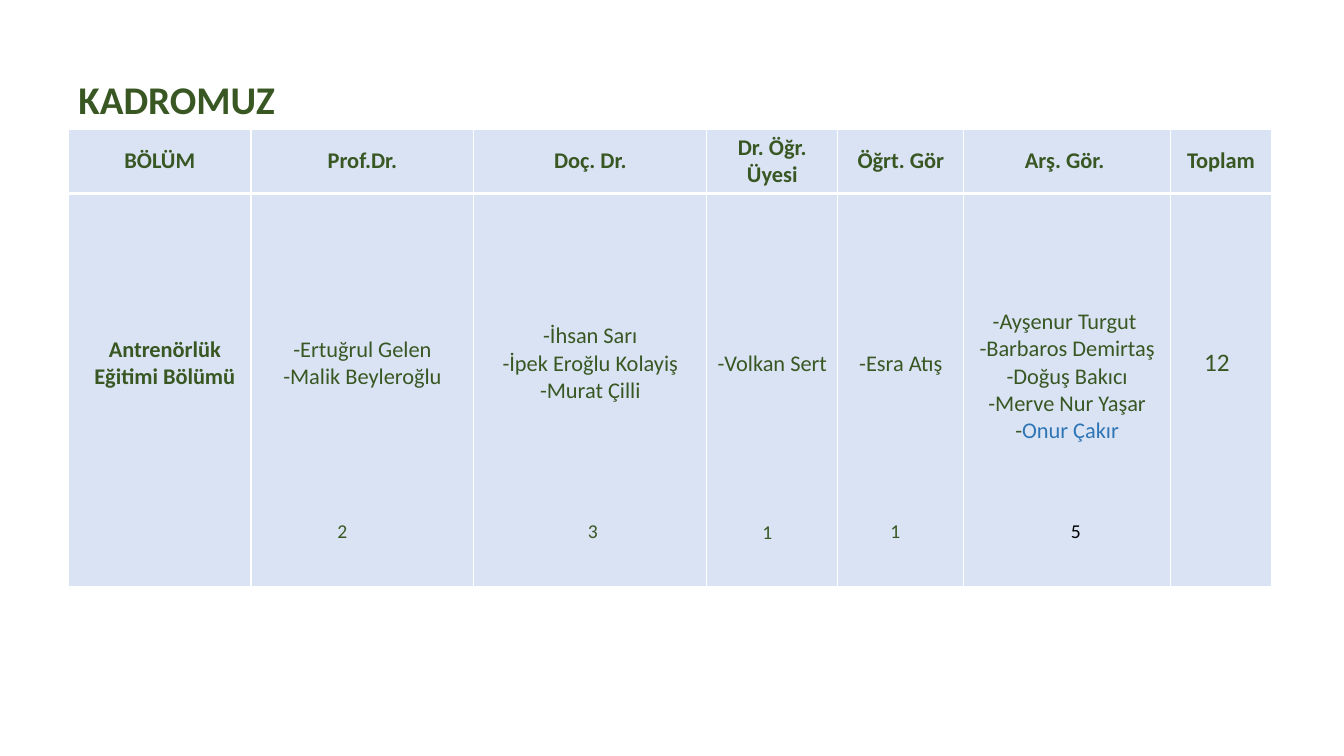
from lxml import etree
from pptx import Presentation
from pptx.dml.color import RGBColor
from pptx.enum.text import MSO_ANCHOR, MSO_AUTO_SIZE, PP_ALIGN
from pptx.oxml.ns import qn
from pptx.util import Inches, Pt

MIDDLE = MSO_ANCHOR.MIDDLE
TOP = MSO_ANCHOR.TOP
CENTER = PP_ALIGN.CENTER
LEFT = PP_ALIGN.LEFT
GROW = MSO_AUTO_SIZE.SHAPE_TO_FIT_TEXT

COLORS = {
    "green": "385723",
    "blue": "2E75B6",
    "black": "000000",
    "white": "FFFFFF",
    "cell": "DAE3F3",
}

COLUMN_WIDTHS = [1.81, 2.21, 2.31, 1.3, 1.25, 2.05, 1]
ROW_HEIGHTS = [0.64, 3.9]
HEADERS = ["BÖLÜM", "Prof.Dr.", "Doç. Dr.", "Dr. Öğr. Üyesi", "Öğrt. Gör", "Arş. Gör. ", "Toplam"]
STAFF = [
    ["Antrenörlük Eğitimi Bölümü"],
    ["-Ertuğrul Gelen", "-Malik Beyleroğlu"],
    ["-İhsan Sarı", "-İpek Eroğlu Kolayiş", "-Murat Çilli"],
    ["-Volkan Sert"],
    ["-Esra Atış"],
    ["-Ayşenur Turgut ", "-Barbaros Demirtaş", "-Doğuş Bakıcı", "-Merve Nur Yaşar",
     [("-", "green"), ("Onur Çakır", "blue")]],
    [],
]
DEPARTMENT_COLUMN = 0
ASSISTANT_COLUMN = 5

COUNTS = [
    ("2", 3.24, 5.1, 0.31, 0.34, 14, "green"),
    ("3", 5.73, 5.1, 0.3, 0.34, 14, "green"),
    ("1", 7.46, 5.11, 0.3, 0.34, 14, "green"),
    ("1", 8.73, 5.1, 0.3, 0.34, 14, "green"),
    ("5", 10.52, 5.1, 0.3, 0.34, 14, "black"),
    ("12", 11.84, 3.39, 0.46, 0.4, 18, "green"),
]


class SlideBuilder:
    font = "Calibri"

    def __init__(self, presentation):
        self.slide = presentation.slides.add_slide(presentation.slide_layouts[6])

    def add_lines(self, frame, lines, size, color="green", bold=False, align=CENTER):
        for index, line in enumerate(lines):
            paragraph = frame.add_paragraph() if index else frame.paragraphs[0]
            paragraph.alignment = align
            pieces = [(line, color)] if isinstance(line, str) else line
            for text, piece_color in pieces:
                run = paragraph.add_run()
                run.text = text
                run.font.name = self.font
                run.font.size = Pt(size)
                run.font.bold = bold
                run.font.color.rgb = RGBColor.from_string(COLORS[piece_color])

    def text(self, text, left, top, width, height, size, color="green",
             bold=False, align=CENTER, anchor=TOP, wrap=False):
        shape = self.slide.shapes.add_textbox(
            Inches(left), Inches(top), Inches(width), Inches(height))
        frame = shape.text_frame
        frame.word_wrap = wrap
        frame.vertical_anchor = anchor
        if not wrap:
            frame.auto_size = GROW
        self.add_lines(frame, [text], size, color, bold, align)
        return shape

    def table(self, left, top, widths, heights):
        table = self.slide.shapes.add_table(
            len(heights), len(widths), Inches(left), Inches(top),
            Inches(sum(widths)), Inches(sum(heights))).table
        table.horz_banding = False
        for column, width in zip(table.columns, widths):
            column.width = Inches(width)
        for row, height in zip(table.rows, heights):
            row.height = Inches(height)
        return table

    def cell(self, cell, lines, bold, top_border=1, bottom_border=1):
        properties = cell._tc.get_or_add_tcPr()
        borders = [("L", 1), ("R", 1), ("T", top_border), ("B", bottom_border)]
        for side, points in borders:
            line = etree.SubElement(properties, qn(f"a:ln{side}"), w=str(Pt(points)))
            fill = etree.SubElement(line, qn("a:solidFill"))
            etree.SubElement(fill, qn("a:srgbClr"), val=COLORS["white"])
        cell.fill.solid()
        cell.fill.fore_color.rgb = RGBColor.from_string(COLORS["cell"])
        cell.vertical_anchor = MIDDLE
        self.add_lines(cell.text_frame, lines, 16, bold=bold)


def main():
    presentation = Presentation()
    presentation.slide_width = Inches(13.33)
    presentation.slide_height = Inches(7.5)
    builder = SlideBuilder(presentation)

    title = builder.text("KADROMUZ", 0.68, 0.66, 11.5, 0.7, 28, bold=True,
                         align=LEFT, anchor=MIDDLE, wrap=True)
    title.text_frame.paragraphs[0].line_spacing = 0.9

    table = builder.table(0.68, 1.28, COLUMN_WIDTHS, ROW_HEIGHTS)
    for column, (header, names) in enumerate(zip(HEADERS, STAFF)):
        builder.cell(table.cell(0, column), [header], True, bottom_border=3)
        staff_cell = table.cell(1, column)
        builder.cell(staff_cell, names, column == DEPARTMENT_COLUMN, top_border=3)
        staff_cell.margin_bottom = Inches(0.32 if column == ASSISTANT_COLUMN else 0.58)
    table.cell(1, DEPARTMENT_COLUMN).margin_left = Inches(0.2)

    for count in COUNTS:
        builder.text(*count)

    presentation.save("out.pptx")


if __name__ == "__main__":
    main()
